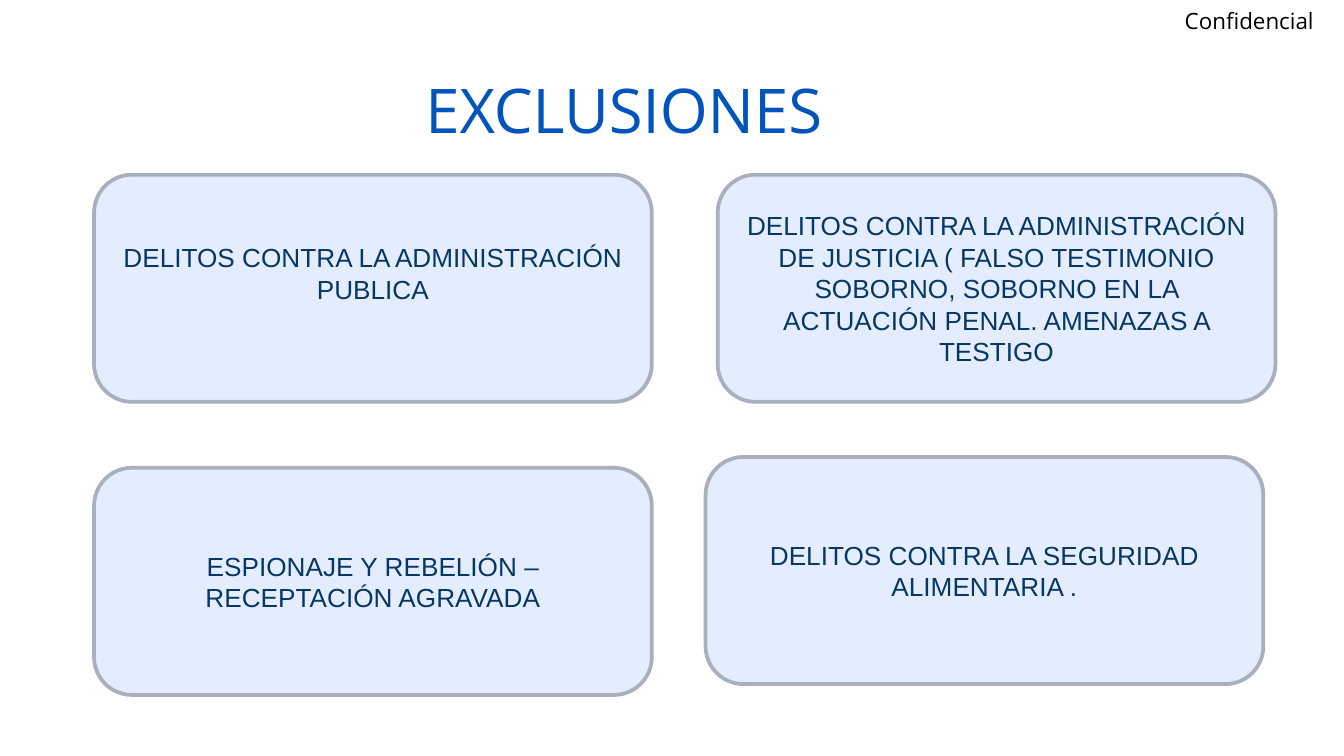
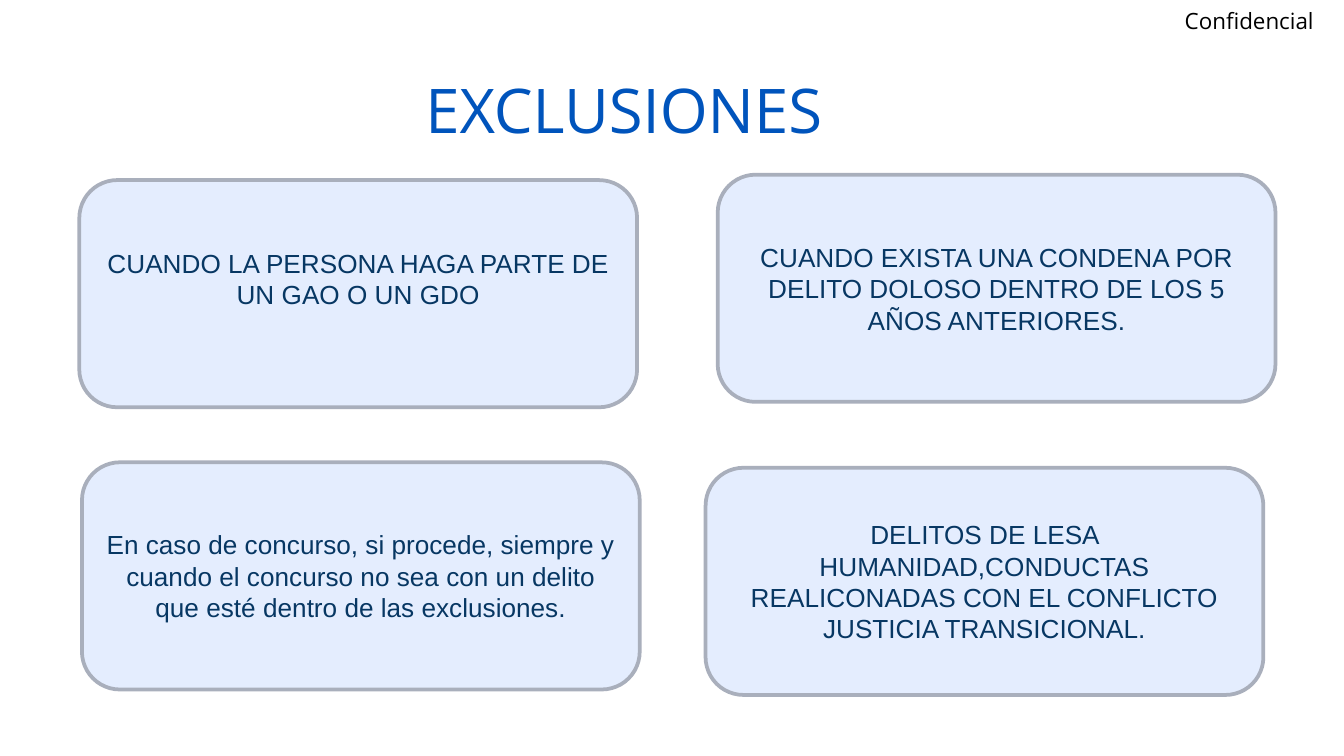
from pptx import Presentation
from pptx.dml.color import RGBColor
from pptx.enum.shapes import MSO_SHAPE
from pptx.enum.text import MSO_ANCHOR, PP_ALIGN
from pptx.util import Pt

BLACK = RGBColor(0x00, 0x00, 0x00)
TITLE_BLUE = RGBColor(0x00, 0x54, 0xBC)
CARD_FILL = RGBColor(0xE4, 0xED, 0xFE)
CARD_LINE = RGBColor(0xA9, 0xAF, 0xBC)
CARD_TEXT = RGBColor(0x07, 0x37, 0x63)

HEADING_FONT = "Open Sans"
CARD_FONT = "Arial"
CARD_WIDTH, CARD_HEIGHT = 298.8, 121.7
RAISED_INSET = 19.7  # lifts the text by half a line

# Each card: left, top, text, raised
EXCLUSIONS = [
    [
        (50.4, 93.6, "DELITOS CONTRA LA ADMINISTRACIÓN PUBLICA", True),
        (50.4, 250.6, "ESPIONAJE Y REBELIÓN – RECEPTACIÓN AGRAVADA", False),
        (384.5, 93.6, "DELITOS CONTRA LA ADMINISTRACIÓN DE JUSTICIA ( FALSO TESTIMONIO "
                      "SOBORNO, SOBORNO EN LA ACTUACIÓN PENAL. AMENAZAS A TESTIGO", False),
        (378, 244.8, "DELITOS CONTRA LA SEGURIDAD ALIMENTARIA .", False),
    ],
    [
        (42.5, 96.5, "CUANDO LA PERSONA HAGA PARTE DE UN GAO O UN GDO", True),
        (384.5, 93.6, "CUANDO EXISTA UNA CONDENA POR DELITO DOLOSO DENTRO DE LOS 5 "
                      "AÑOS ANTERIORES.", False),
        (378, 250.6, "DELITOS DE LESA HUMANIDAD,CONDUCTAS REALICONADAS CON EL "
                     "CONFLICTO JUSTICIA TRANSICIONAL.", False),
        (43.9, 247.7, "En caso de concurso, si procede, siempre y cuando el concurso no "
                      "sea con un delito que esté dentro de las exclusiones.", False),
    ],
]


class SlideBuilder:
    def __init__(self, deck):
        self.deck = deck
        self.page = None

    def start_page(self):
        """Add a slide with the confidentiality mark and the shared title."""
        self.page = self.deck.slides.add_slide(self.deck.slide_layouts[6])
        self.heading(629.3, 0.7, 90.7, 22.3, "Confidencial", 12, BLACK)
        self.heading(222.5, 21.6, 448.6, 78.5, "EXCLUSIONES", 33, TITLE_BLUE)

    def set_text(self, shape, text, font_name, size, color):
        """Fill a shape with one vertically centred paragraph and return it."""
        frame = shape.text_frame
        frame.word_wrap = True
        frame.vertical_anchor = MSO_ANCHOR.MIDDLE
        para = frame.paragraphs[0]
        para.text = text
        para.font.name = font_name
        para.font.size = Pt(size)
        para.font.color.rgb = color
        return para

    def heading(self, left, top, width, height, text, size, color):
        box = self.page.shapes.add_textbox(Pt(left), Pt(top), Pt(width), Pt(height))
        frame = box.text_frame
        frame.margin_left = frame.margin_right = Pt(5.4)
        frame.margin_top = frame.margin_bottom = Pt(2.7)
        self.set_text(box, text, HEADING_FONT, size, color).line_spacing = 0.9

    def card(self, left, top, text, raised):
        card = self.page.shapes.add_shape(
            MSO_SHAPE.ROUNDED_RECTANGLE, Pt(left), Pt(top), Pt(CARD_WIDTH), Pt(CARD_HEIGHT))
        card.shadow.inherit = False
        card.fill.solid()
        card.fill.fore_color.rgb = CARD_FILL
        card.line.color.rgb = CARD_LINE
        card.line.width = Pt(2)
        if raised:
            card.text_frame.margin_bottom = Pt(RAISED_INSET)
        self.set_text(card, text, CARD_FONT, 14, CARD_TEXT).alignment = PP_ALIGN.CENTER


def main():
    deck = Presentation()
    deck.slide_width, deck.slide_height = Pt(720), Pt(405)
    builder = SlideBuilder(deck)
    for cards in EXCLUSIONS:
        builder.start_page()
        for card in cards:
            builder.card(*card)
    deck.save("out.pptx")


if __name__ == "__main__":
    main()
